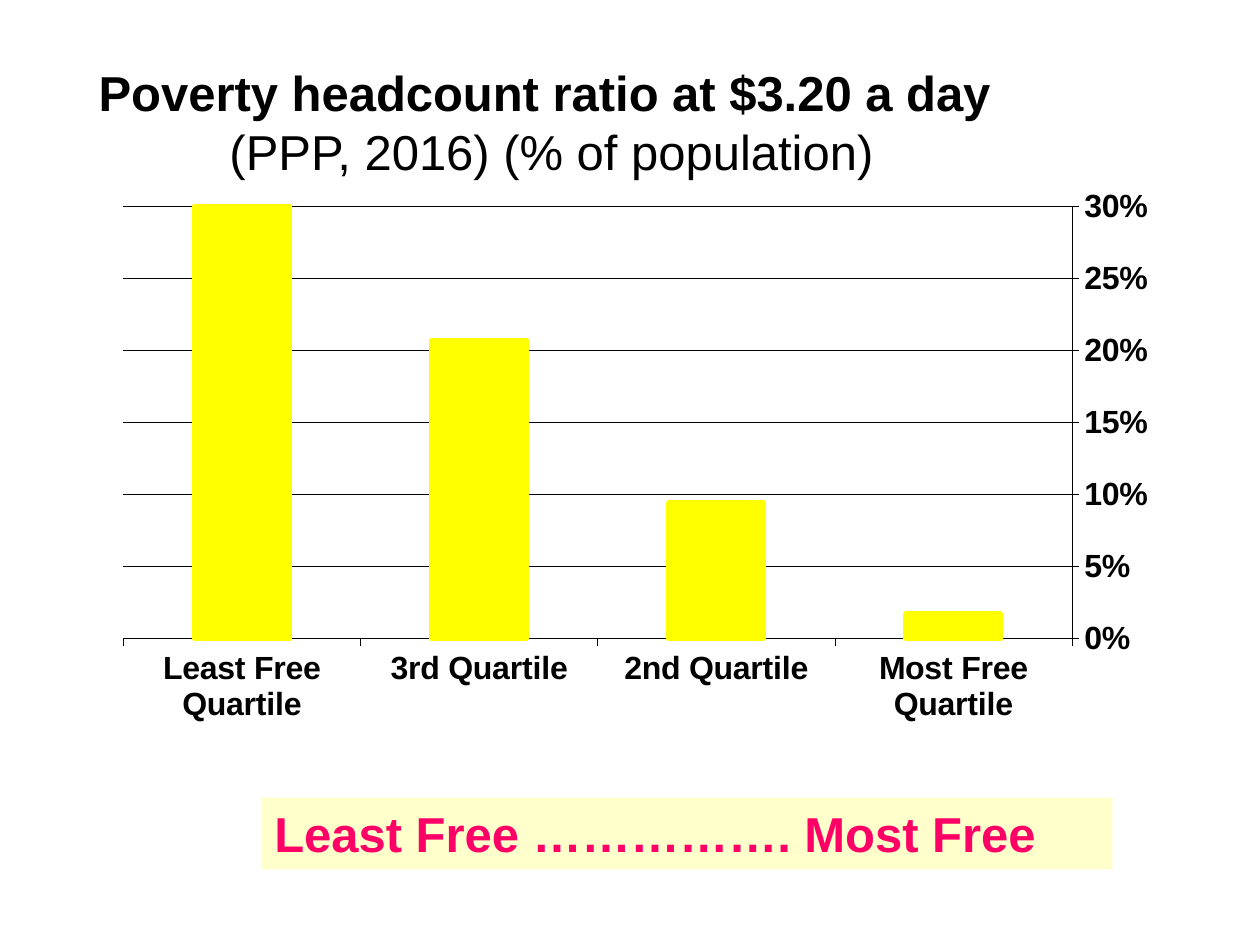
import pptx
import pptx.chart.data
import pptx.dml.color
import pptx.enum.chart
import pptx.enum.text
import pptx.oxml
import pptx.oxml.ns
import pptx.util
from pptx.util import Cm


def rgb(hex_color):
    return pptx.dml.color.RGBColor.from_string(hex_color)


def add_text(paragraph, text, size=28, color="000000", bold=True):
    run = paragraph.add_run()
    run.text = text
    run.font.name = "Arial"
    run.font.size = pptx.util.Pt(size)
    run.font.bold = bold
    run.font.color.rgb = rgb(color)


deck = pptx.Presentation()
deck.slide_width, deck.slide_height = Cm(25.4), Cm(19.05)
slide = deck.slides.add_slide(deck.slide_layouts[6])

# Title
title = slide.shapes.add_textbox(Cm(0), Cm(0), Cm(22.23), Cm(4.88)).text_frame
title.word_wrap = True
title.vertical_anchor = pptx.enum.text.MSO_ANCHOR.MIDDLE
heading = title.paragraphs[0]
heading.alignment = pptx.enum.text.PP_ALIGN.CENTER
add_text(heading, "Poverty headcount ratio at $3.20 a day ")
heading.add_line_break()
add_text(heading, "(PPP, 2016) (% of population)", bold=False)

# Poverty by quartile; the reversed category axis puts the least free first
poverty = pptx.chart.data.CategoryChartData(number_format="0%")
poverty.categories = ["Most Free Quartile", "2nd Quartile", "3rd Quartile", "Least Free Quartile"]
poverty.add_series("Series 1", [0.017, 0.094, 0.207, 0.315])
chart = slide.shapes.add_chart(
    pptx.enum.chart.XL_CHART_TYPE.COLUMN_CLUSTERED,
    Cm(-0.64), Cm(3.66), Cm(25.2), Cm(11.35), poverty).chart
chart.has_legend = False
chart.has_title = False
chart.font.name = "Arial"
chart.font.size = pptx.util.Pt(18.3)
chart.font.bold = True
chart.font.color.rgb = rgb("000000")

quartiles, share = chart.category_axis, chart.value_axis
quartiles.reverse_order = True
quartiles.tick_label_position = pptx.enum.chart.XL_TICK_LABEL_POSITION.LOW
share.minimum_scale, share.maximum_scale, share.major_unit = 0, 0.3, 0.05
share.tick_labels.number_format = "0%"
share.tick_labels.number_format_is_linked = False
share.has_major_gridlines = True
for axis in (quartiles, share):
    axis.major_tick_mark = pptx.enum.chart.XL_TICK_MARK.OUTSIDE
for line in (quartiles.format.line, share.format.line, share.major_gridlines.format.line):
    line.width = pptx.util.Pt(0.25)
    line.color.rgb = rgb("000000")

plot = chart.plots[0]
plot.gap_width = 150
plot.vary_by_categories = False
bars = plot.series[0].format
bars.fill.solid()
bars.fill.fore_color.rgb = rgb("FFFF00")
bars.line.color.rgb = rgb("FFFF00")
bars.line.width = pptx.util.Pt(3.05)

# Fixed inner plot area, as fractions of the chart
plot_area = chart.element.find(".//" + pptx.oxml.ns.qn("c:plotArea"))
for layout in plot_area.findall(pptx.oxml.ns.qn("c:layout")):
    plot_area.remove(layout)
settings = [("layoutTarget", "inner"), ("xMode", "edge"), ("yMode", "edge"),
            ("x", 0.124), ("y", 0.044), ("w", 0.759), ("h", 0.768)]
plot_area.insert(0, pptx.oxml.parse_xml(
    f'<c:layout {pptx.oxml.ns.nsdecls("c")}><c:manualLayout>'
    + "".join(f'<c:{tag} val="{value}"/>' for tag, value in settings)
    + "</c:manualLayout></c:layout>"))

# Freedom scale
scale = slide.shapes.add_textbox(Cm(5.28), Cm(16.08), Cm(17.15), Cm(1.45))
scale.fill.solid()
scale.fill.fore_color.rgb = rgb("FFFFCC")
scale.text_frame.word_wrap = True
scale.text_frame.auto_size = pptx.enum.text.MSO_AUTO_SIZE.SHAPE_TO_FIT_TEXT
add_text(scale.text_frame.paragraphs[0], "Least Free ……………. Most Free", color="FF0066")

deck.save("out.pptx")
